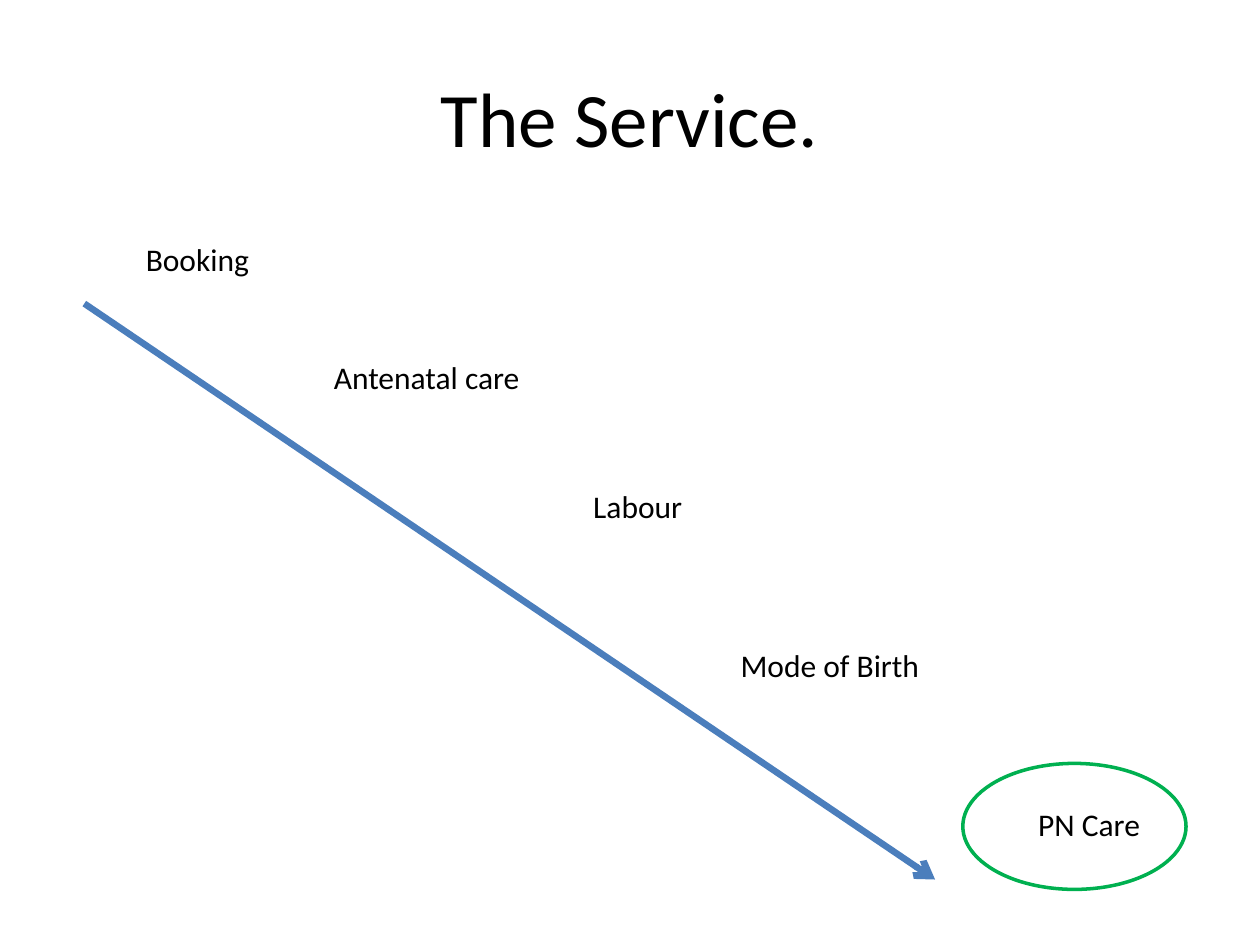
from dataclasses import dataclass

from lxml.etree import SubElement
from pptx import Presentation
from pptx.dml.color import RGBColor
from pptx.enum.shapes import MSO_CONNECTOR, MSO_SHAPE
from pptx.enum.text import MSO_ANCHOR, MSO_AUTO_SIZE, PP_ALIGN
from pptx.oxml.ns import qn
from pptx.util import Cm, Pt


@dataclass(frozen=True)
class Theme:
    font: str = "Calibri"
    text: RGBColor = RGBColor(0x00, 0x00, 0x00)
    arrow: RGBColor = RGBColor(0x4B, 0x7E, 0xBC)
    highlight: RGBColor = RGBColor(0x00, 0xB0, 0x50)
    title_size: float = 44
    label_size: float = 18
    arrow_width: float = 3.75
    highlight_width: float = 2


class SlideBuilder:
    def __init__(self, page, theme):
        self.page = page
        self.theme = theme

    def add_text(self, text, area, size):
        box = self.page.shapes.add_textbox(*map(Cm, area))
        para = box.text_frame.paragraphs[0]
        span = para.add_run()
        span.text = text
        span.font.name = self.theme.font
        span.font.size = Pt(size)
        span.font.color.rgb = self.theme.text
        return box.text_frame, para

    def add_title(self, text, area):
        frame, para = self.add_text(text, area, self.theme.title_size)
        frame.word_wrap = True
        frame.vertical_anchor = MSO_ANCHOR.MIDDLE
        para.alignment = PP_ALIGN.CENTER

    def add_label(self, text, area):
        frame, para = self.add_text(text, area, self.theme.label_size)
        frame.word_wrap = False
        frame.auto_size = MSO_AUTO_SIZE.SHAPE_TO_FIT_TEXT
        para.alignment = PP_ALIGN.LEFT

    def add_arrow(self, start, end):
        arrow = self.page.shapes.add_connector(
            MSO_CONNECTOR.STRAIGHT, *map(Cm, start + end))
        arrow.line.color.rgb = self.theme.arrow
        arrow.line.width = Pt(self.theme.arrow_width)
        SubElement(arrow.line._get_or_add_ln(), qn("a:tailEnd"), type="arrow")
        SubElement(arrow._element.spPr, qn("a:effectLst"))

    def add_ring(self, area):
        ring = self.page.shapes.add_shape(MSO_SHAPE.OVAL, *map(Cm, area))
        ring.shadow.inherit = False
        ring.fill.background()
        ring.line.color.rgb = self.theme.highlight
        ring.line.width = Pt(self.theme.highlight_width)


def main():
    deck = Presentation()
    deck.slide_width, deck.slide_height = Cm(25.4), Cm(19.05)
    page = deck.slides.add_slide(deck.slide_layouts[6])
    theme = Theme()
    builder = SlideBuilder(page, theme)

    # Title
    builder.add_title("The Service.", (1.27, 0.76, 22.86, 3.18))

    # Stages of care: text, left, top, width
    label_height = 1.02
    stages = [
        ("Booking", 2.69, 4.72, 2.62),
        ("Antenatal care", 6.48, 7.09, 4.29),
        ("Labour", 11.71, 9.7, 2.34),
        ("Mode of Birth", 14.68, 12.9, 4.17),
        ("PN Care", 20.68, 16.1, 2.59),
    ]
    for text, left, top, width in stages:
        builder.add_label(text, (left, top, width, label_height))

    # Path through the service
    builder.add_arrow((1.7, 6.12), (18.85, 17.73))

    # Highlight on the last stage
    builder.add_ring((19.41, 15.39, 4.5, 2.54))

    deck.save("out.pptx")


if __name__ == "__main__":
    main()
